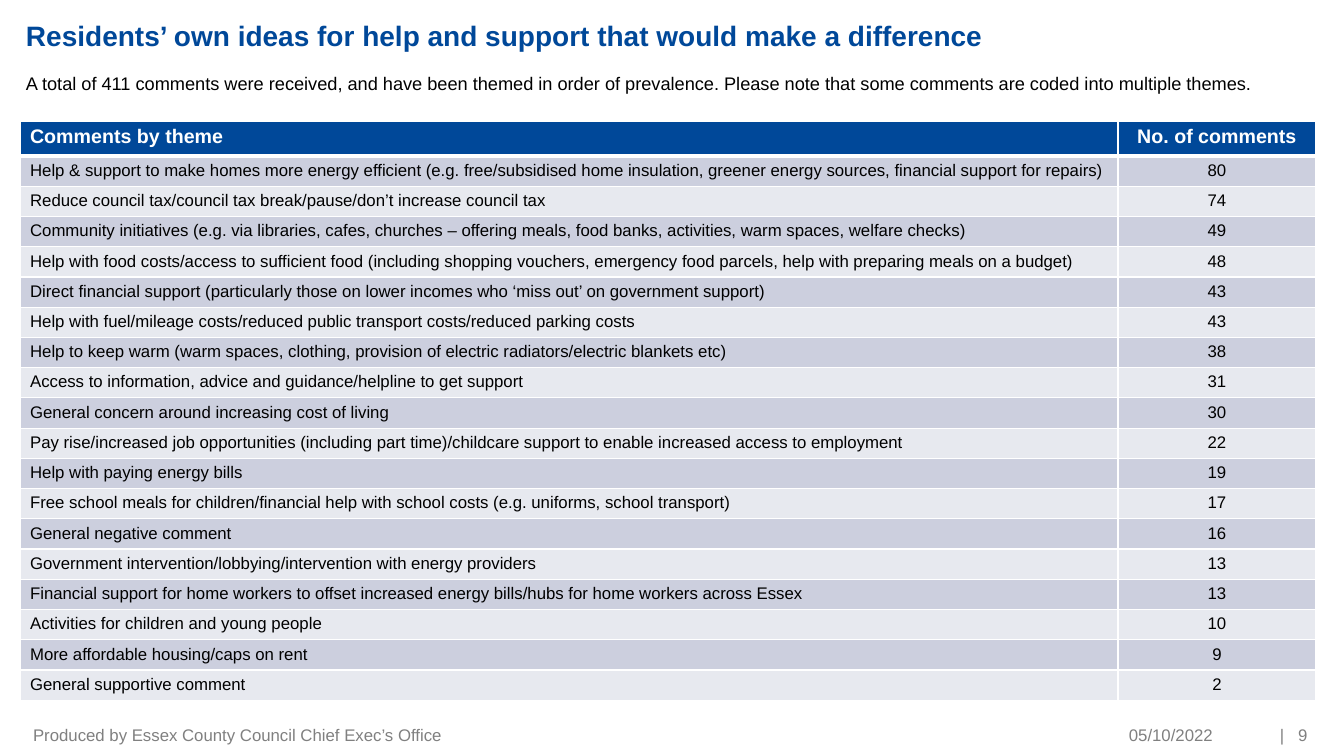
import pptx
import pptx.dml.color
import pptx.enum.text
import pptx.oxml
import pptx.oxml.ns
import pptx.util

SCALE = 12192000 / 1344
ALIGN = pptx.enum.text.PP_ALIGN
ANCHOR = pptx.enum.text.MSO_ANCHOR
BLUE, WHITE, BLACK, GREY = "004899", "FFFFFF", "000000", "808080"
BANDS = ["CCCFDE", "E7E9EF"]

HEADS = ("Comments by theme", "No. of comments")
THEMES = [
    ("Help & support to make homes more energy efficient (e.g. free/subsidised home insulation, "
     "greener energy sources, financial support for repairs)", 80),
    ("Reduce council tax/council tax break/pause/don’t increase council tax", 74),
    ("Community initiatives (e.g. via libraries, cafes, churches – offering meals, food banks, "
     "activities, warm spaces, welfare checks)", 49),
    ("Help with food costs/access to sufficient food (including shopping vouchers, emergency "
     "food parcels, help with preparing meals on a budget)", 48),
    ("Direct financial support (particularly those on lower incomes who ‘miss out’ on "
     "government support)", 43),
    ("Help with fuel/mileage costs/reduced public transport costs/reduced parking costs", 43),
    ("Help to keep warm (warm spaces, clothing, provision of electric radiators/electric "
     "blankets etc)", 38),
    ("Access to information, advice and guidance/helpline to get support", 31),
    ("General concern around increasing cost of living", 30),
    ("Pay rise/increased job opportunities (including part time)/childcare support to enable "
     "increased access to employment", 22),
    ("Help with paying energy bills", 19),
    ("Free school meals for children/financial help with school costs (e.g. uniforms, "
     "school transport)", 17),
    ("General negative comment", 16),
    ("Government intervention/lobbying/intervention with energy providers", 13),
    ("Financial support for home workers to offset increased energy bills/hubs for home "
     "workers across Essex", 13),
    ("Activities for children and young people", 10),
    ("More affordable housing/caps on rent", 9),
    ("General supportive comment", 2),
]


def px(n):
    return pptx.util.Emu(round(n * SCALE))


def rgb(code):
    return pptx.dml.color.RGBColor.from_string(code)


def style(para, size, color, bold=False, align=ALIGN.LEFT):
    para.alignment = align
    font = para.font
    font.name, font.size, font.bold = "Arial", pptx.util.Pt(size), bold
    font.color.rgb = rgb(color)


def fill_frame(frame, text, anchor, insets):
    """Set text, anchor and left, top, right, bottom insets; return the paragraph."""
    frame.text = text
    frame.word_wrap = True
    frame.auto_size = pptx.enum.text.MSO_AUTO_SIZE.NONE
    frame.vertical_anchor = anchor
    (frame.margin_left, frame.margin_top,
     frame.margin_right, frame.margin_bottom) = map(px, insets)
    return frame.paragraphs[0]


def add_text(slide, box, text, anchor, insets):
    shape = slide.shapes.add_textbox(*map(px, box))
    return fill_frame(shape.text_frame, text, anchor, insets)


def add_head(slide, box):
    """Place the title and, below it, the note on how comments were counted."""
    x, y, w, h = box
    title = slide.shapes.title
    title.left, title.top, title.width, title.height = map(px, (x, y, w, 34))
    para = fill_frame(title.text_frame,
                      "Residents’ own ideas for help and support that would make a difference",
                      ANCHOR.BOTTOM, (10, 5, 10, 0))
    style(para, 20, BLUE, bold=True)
    para = add_text(slide, (x, y + h - 32, w - 41, 32),
                    "A total of 411 comments were received, and have been themed in order of "
                    "prevalence. Please note that some comments are coded into multiple themes.",
                    ANCHOR.TOP, (10, 5, 10, 5))
    style(para, 13, BLACK)
    para.space_before = pptx.util.Pt(4)


def add_edges(cell, top, bottom):
    """Draw white cell borders; top and bottom are widths in points."""
    props = cell._tc.get_or_add_tcPr()
    for side, width in (("L", 1), ("R", 1), ("T", top), ("B", bottom)):
        props.append(pptx.oxml.parse_xml(
            f'<a:ln{side} {pptx.oxml.ns.nsdecls("a")} w="{pptx.util.Pt(width)}">'
            f'<a:solidFill><a:srgbClr val="{WHITE}"/></a:solidFill></a:ln{side}>'))


def add_themes(slide, box):
    x, y, w, h = box
    rows = [HEADS] + THEMES
    table = slide.shapes.add_table(len(rows), 2, *map(px, box)).table
    count_w, head_h = 198, 35
    table.columns[0].width, table.columns[1].width = px(w - count_w), px(count_w)
    for r, row in enumerate(rows):
        head = r == 0
        table.rows[r].height = px(head_h if head else (h - head_h) / len(THEMES))
        for c, value in enumerate(row):
            cell = table.cell(r, c)
            cell.text = str(value)
            add_edges(cell, 3 if r == 1 else 1, 3 if head else 1)
            cell.fill.solid()
            cell.fill.fore_color.rgb = rgb(BLUE if head else BANDS[(r - 1) % 2])
            style(cell.text_frame.paragraphs[0], 14 if head else 12,
                  WHITE if head else BLACK, head, ALIGN.CENTER if c else ALIGN.LEFT)


def add_foot(slide, box):
    """Place the producer, the date and the page number."""
    x, y, w, h = box
    parts = [
        (x, 635, "Produced by Essex County Council Chief Exec’s Office", 0, 10, ALIGN.LEFT),
        (x + 938, 242, "05/10/2022", 10, 0, ALIGN.RIGHT),
        (x + w - 86, 86, "|\t9", 58, 0, ALIGN.LEFT),
    ]
    for left, width, text, start, end, align in parts:
        para = add_text(slide, (left, y, width, h), text, ANCHOR.MIDDLE, (start, 5, end, 5))
        style(para, 12, GREY, align=align)
    para._p.get_or_add_pPr().insert(0, pptx.oxml.parse_xml(
        f'<a:tabLst {pptx.oxml.ns.nsdecls("a")}><a:tab pos="{px(18)}" algn="l"/></a:tabLst>'))


def main():
    deck = pptx.Presentation()
    deck.slide_width, deck.slide_height = px(1344), px(756)
    slide = deck.slides.add_slide(deck.slide_layouts[5])
    add_head(slide, (16, 18, 1303, 81))
    add_themes(slide, (20, 121, 1296, 580))
    add_foot(slide, (33, 727, 1275, 15))
    deck.save("out.pptx")


if __name__ == "__main__":
    main()
